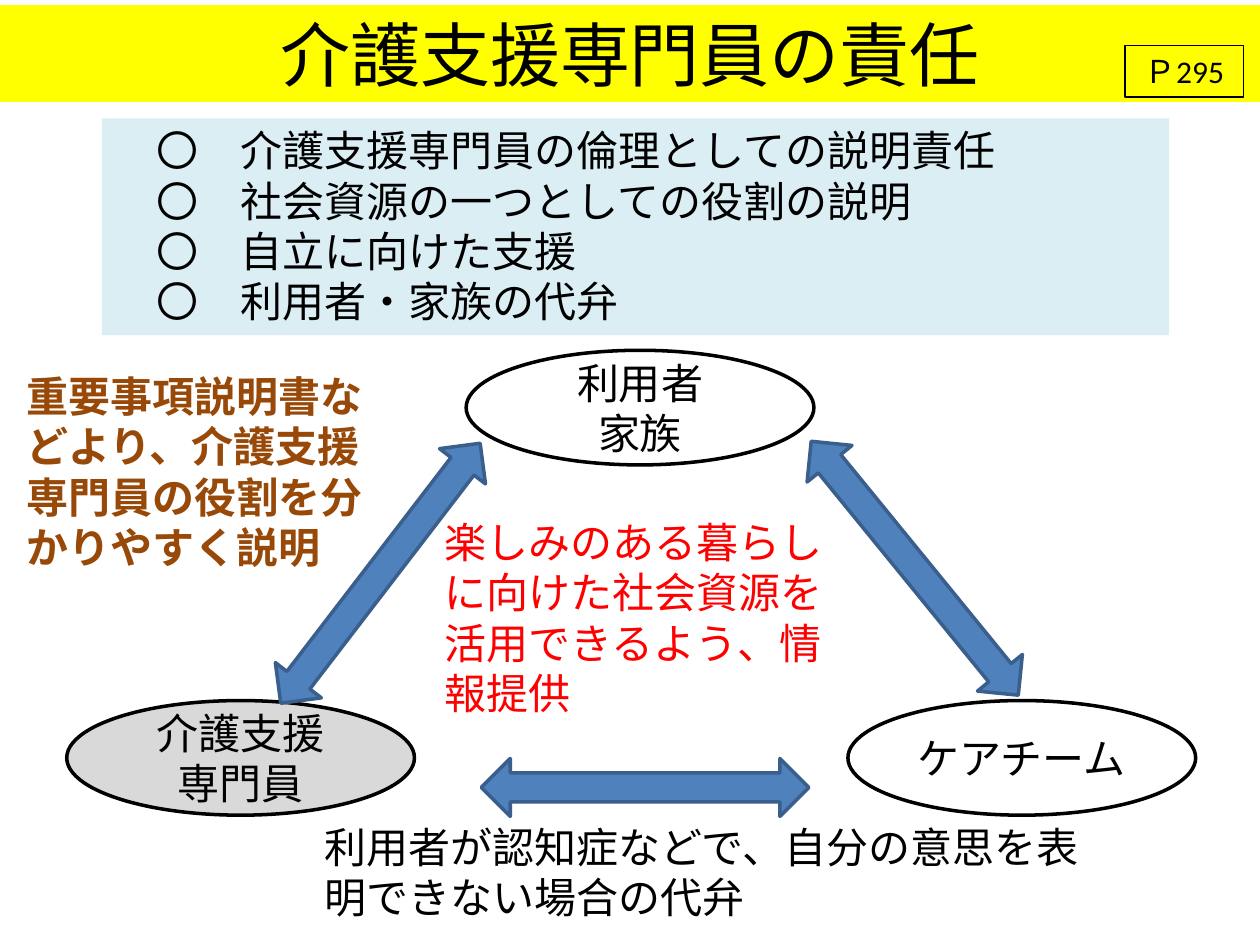
from pptx import Presentation
from pptx.dml.color import RGBColor
from pptx.enum.shapes import MSO_SHAPE as Kind
from pptx.enum.text import MSO_ANCHOR as Anchor, PP_ALIGN as Align
from pptx.util import Inches, Pt

FONT = "Calibri"
BLACK = "000000"


def color(text):
    return RGBColor.from_string(text)


def write(shape, text, size=24, ink=BLACK, bold=False,
          align=Align.LEFT, anchor=Anchor.TOP):
    frame = shape.text_frame
    frame.text = text
    frame.word_wrap = True
    frame.vertical_anchor = anchor
    for para in frame.paragraphs:
        para.alignment = align
        for run in para.runs:
            font = run.font
            font.name, font.size, font.bold = FONT, Pt(size), bold
            font.color.rgb = color(ink)


def draw(slide, kind, box, fill=None, line=None, width=2):
    shape = slide.shapes.add_shape(kind, *map(Inches, box))
    shape.shadow.inherit = False
    if fill:
        shape.fill.solid()
        shape.fill.fore_color.rgb = color(fill)
    else:
        shape.fill.background()
    if line:
        shape.line.color.rgb = color(line)
        shape.line.width = Pt(width)
    else:
        shape.line.fill.background()
    return shape


def add_note(slide, box, text, **style):
    write(slide.shapes.add_textbox(*map(Inches, box)), text, **style)


def add_title(slide, box, title, page):
    left, top, wide, high = box
    band = draw(slide, Kind.RECTANGLE, box, "FFFF00")
    write(band, title, size=40, align=Align.CENTER)
    # Page mark near the right end of the band
    mark = draw(slide, Kind.RECTANGLE,
                (left + wide - 1.07, top + 0.32, 0.94, 0.41),
                line=BLACK, width=0.75)
    write(mark, page, size=18, align=Align.CENTER)


def add_points(slide, box, points):
    panel = draw(slide, Kind.RECTANGLE, box, "DBEEF4")
    write(panel, "\n".join(f"　〇　{point}" for point in points))


def add_cycle(slide, box):
    left, top, wide, high = box
    # Three parties: one on top, two at the base
    oval_w, oval_h = 2.76, 0.91
    base = high - oval_h
    parties = [
        (0, base, "介護支援\n専門員", "D9D9D9"),
        (3.17, 0, "利用者\n家族", None),
        (wide - oval_w, base, "ケアチーム", None),
    ]
    for x, y, text, fill in parties:
        oval = draw(slide, Kind.OVAL, (left + x, top + y, oval_w, oval_h),
                    fill, BLACK)
        write(oval, text, align=Align.CENTER, anchor=Anchor.MIDDLE)

    # Two-way arrows along the sides
    for x, y, turn in [(3.29, 3.24, 0), (1.19, 1.54, 307.5),
                       (5.43, 1.5, 230.8)]:
        arrow = draw(slide, Kind.LEFT_RIGHT_ARROW,
                     (left + x, top + y, 2.6, 0.46), "4F81BD", "3A5F8C")
        arrow.rotation = turn


def main():
    deck = Presentation()
    deck.slide_width, deck.slide_height = Inches(10), Inches(7.5)
    slide = deck.slides.add_slide(deck.slide_layouts[6])

    add_points(slide, (0.81, 0.94, 8.47, 1.72), [
        "介護支援専門員の倫理としての説明責任",
        "社会資源の一つとしての役割の説明",
        "自立に向けた支援",
        "利用者・家族の代弁",
    ])
    add_cycle(slide, (0.53, 2.78, 8.96, 3.69))

    # Notes beside, inside and below the cycle
    add_note(slide, (2.48, 6.47, 6.36, 0.91),
             "利用者が認知症などで、自分の意思を表明できない場合の代弁")
    add_note(slide, (0.11, 2.89, 3.13, 1.72),
             "重要事項説明書などより、介護支援専門員の役割を分かりやすく説明",
             ink="984807", bold=True)
    add_note(slide, (3.43, 4.05, 3.45, 1.31),
             "楽しみのある暮らしに向けた社会資源を活用できるよう、情報提供",
             ink="FF0000")

    add_title(slide, (0, 0.04, 10, 0.77), "介護支援専門員の責任", "Ｐ295")
    deck.save("out.pptx")


if __name__ == "__main__":
    main()
